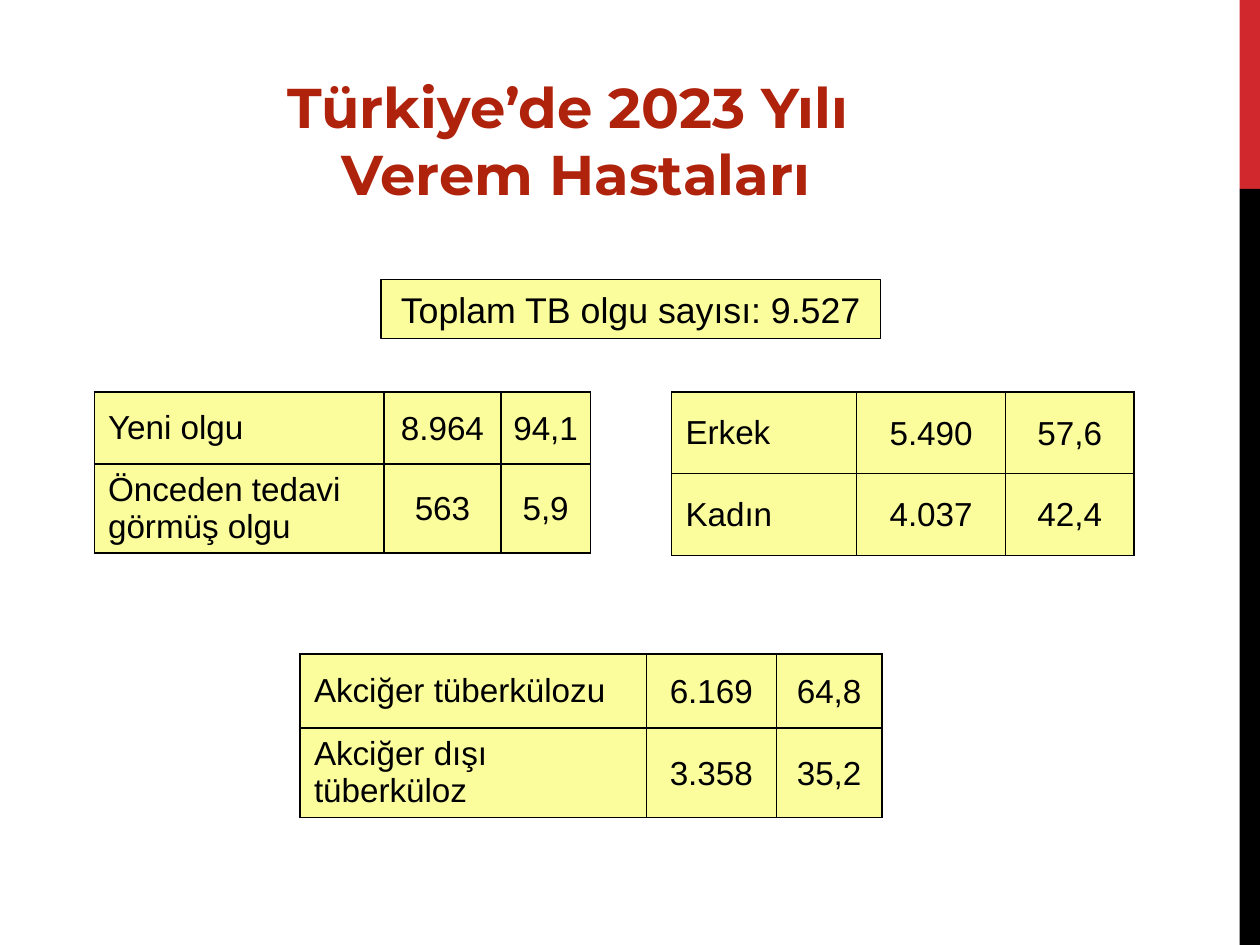
from lxml import etree
from pptx import Presentation
from pptx.dml.color import RGBColor
from pptx.enum import shapes, text
from pptx.oxml import ns
from pptx.util import Cm, Pt

COLORS = {"red": "D1282E", "title": "AF220B", "black": "000000", "yellow": "FBFD9D"}
SLIDE_WIDTH, SLIDE_HEIGHT = 25.4, 19.05
STRIPE_WIDTH = 0.41
STRIPES = [("red", 3.81), ("black", 15.24)]

TITLE = ["Türkiye’de 2023 Yılı ", "Verem Hastaları"]
TOTAL = "Toplam TB olgu sayısı: 9.527"
TABLES = [
    {
        "position": (1.9, 7.9),
        "columns": (5.84, 2.36, 1.8),
        "rows": (1.45, 1.8),
        "cells": [("Yeni olgu", "8.964", "94,1"),
                  ("Önceden tedavi görmüş olgu", "563", "5,9")],
    },
    {
        "position": (13.54, 7.9),
        "columns": (3.73, 3, 2.59),
        "rows": (1.65, 1.65),
        "cells": [("Erkek", "5.490", "57,6"), ("Kadın", "4.037", "42,4")],
    },
    {
        "position": (6.05, 13.18),
        "columns": (6.98, 2.62, 2.13),
        "rows": (1.5, 1.8),
        "cells": [("Akciğer tüberkülozu", "6.169", "64,8"),
                  ("Akciğer dışı tüberküloz", "3.358", "35,2")],
    },
]

TITLE_FONT = {"name": "Montserrat", "size": Pt(32), "bold": True}
TOTAL_FONT = {"name": "Arial", "size": Pt(20.4)}
CELL_FONT = {"name": "Arial", "size": Pt(19)}
LABEL_MARGINS = {"margin_left": Cm(0.28), "margin_right": Cm(0.28),
                 "margin_top": Cm(0.1), "margin_bottom": Cm(0.1)}
NUMBER_MARGINS = {"margin_left": Cm(0.03), "margin_right": Cm(0.03),
                  "margin_top": Cm(0.03), "margin_bottom": 0}


def apply(target, values):
    for name, value in values.items():
        setattr(target, name, value)


def rgb(name):
    return RGBColor.from_string(COLORS[name])


def write(paragraph, content, font, color, alignment):
    paragraph.text = content
    paragraph.alignment = alignment
    apply(paragraph.font, font)
    paragraph.font.color.rgb = rgb(color)


def add_rectangle(slide, position, size, color):
    shape = slide.shapes.add_shape(
        shapes.MSO_SHAPE.RECTANGLE, *map(Cm, position + size))
    shape.shadow.inherit = False
    shape.fill.solid()
    shape.fill.fore_color.rgb = rgb(color)
    shape.line.fill.background()
    return shape


def add_borders(cell):
    properties = cell._tc.get_or_add_tcPr()
    for index, side in enumerate(("lnL", "lnR", "lnT", "lnB")):
        border = etree.Element(ns.qn(f"a:{side}"), w=str(Pt(1)))
        fill = etree.SubElement(border, ns.qn("a:solidFill"))
        etree.SubElement(fill, ns.qn("a:srgbClr"), val=COLORS["black"])
        properties.insert(index, border)


def add_stripes(slide):
    top = 0
    for color, height in STRIPES:
        add_rectangle(slide, (SLIDE_WIDTH - STRIPE_WIDTH, top),
                      (STRIPE_WIDTH, height), color)
        top += height


def add_title(slide):
    title = slide.shapes.title
    apply(title, {"left": Cm(2.11), "top": Cm(1.32),
                  "width": Cm(19), "height": Cm(3)})
    frame = title.text_frame
    frame.text = "\n".join(TITLE)
    for paragraph, line in zip(frame.paragraphs, TITLE):
        write(paragraph, line, TITLE_FONT, "title", text.PP_ALIGN.CENTER)


def add_total(slide):
    box = add_rectangle(slide, (7.68, 5.63), (10.07, 1.2), "yellow")
    box.line.color.rgb = rgb("black")
    box.line.width = Pt(0.75)
    write(box.text_frame.paragraphs[0], TOTAL, TOTAL_FONT, "black",
          text.PP_ALIGN.CENTER)


def add_case_table(slide, data):
    size = sum(data["columns"]), sum(data["rows"])
    table = slide.shapes.add_table(
        len(data["rows"]), len(data["columns"]),
        *map(Cm, data["position"] + size)).table
    apply(table, {"first_row": False, "horz_banding": False})
    for column, width in zip(table.columns, data["columns"]):
        column.width = Cm(width)
    for row, height, values in zip(table.rows, data["rows"], data["cells"]):
        row.height = Cm(height)
        for index, (cell, value) in enumerate(zip(row.cells, values)):
            apply(cell, NUMBER_MARGINS if index else LABEL_MARGINS)
            cell.vertical_anchor = text.MSO_ANCHOR.MIDDLE
            cell.fill.solid()
            cell.fill.fore_color.rgb = rgb("yellow")
            add_borders(cell)
            alignment = text.PP_ALIGN.CENTER if index else text.PP_ALIGN.LEFT
            write(cell.text_frame.paragraphs[0], value, CELL_FONT, "black",
                  alignment)


def main():
    presentation = Presentation()
    apply(presentation, {"slide_width": Cm(SLIDE_WIDTH),
                         "slide_height": Cm(SLIDE_HEIGHT)})
    slide = presentation.slides.add_slide(presentation.slide_layouts[5])
    add_stripes(slide)
    add_title(slide)
    add_total(slide)
    for data in TABLES:
        add_case_table(slide, data)
    presentation.save("out.pptx")


if __name__ == "__main__":
    main()
